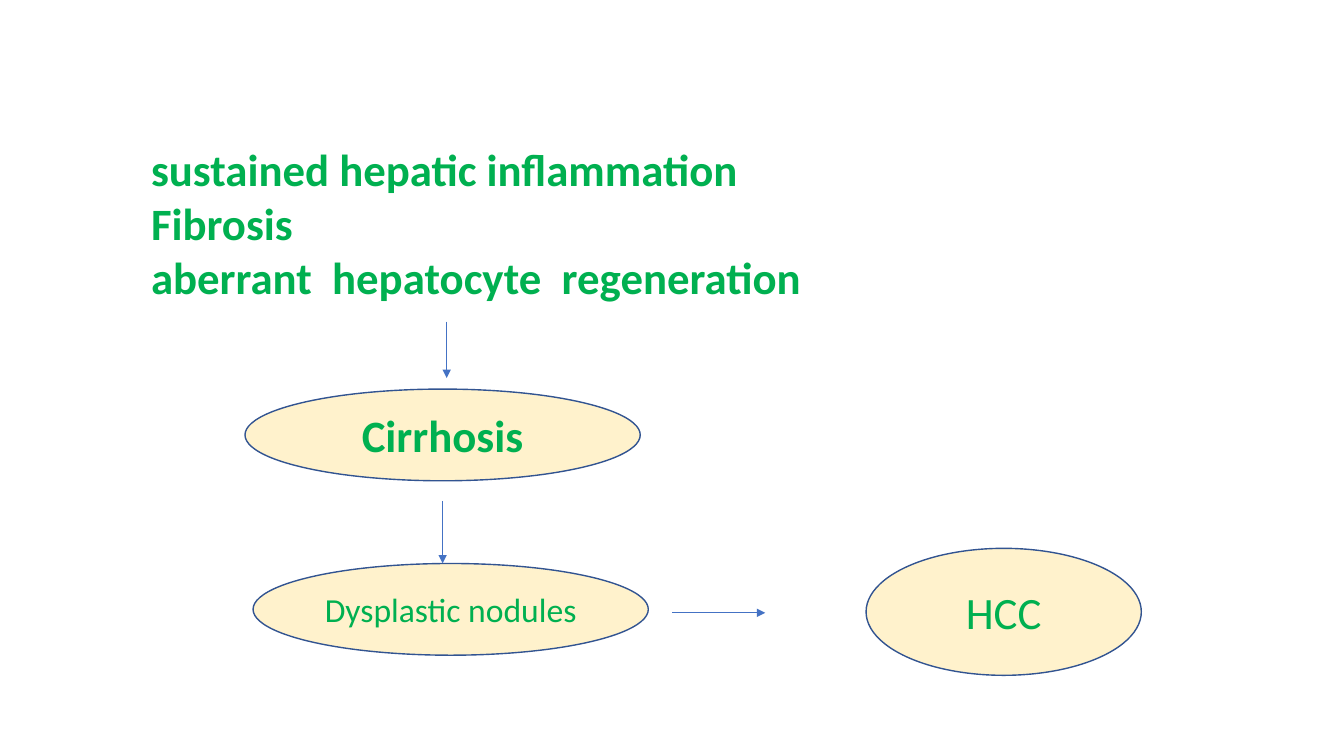
from pptx import Presentation
from pptx.dml.color import RGBColor
from pptx.enum.shapes import MSO_CONNECTOR as LINE, MSO_SHAPE as SHAPE
from pptx.enum.text import MSO_ANCHOR as ANCHOR, PP_ALIGN as ALIGN
from pptx.oxml.ns import qn
from pptx.util import Inches, Pt
from lxml.etree import SubElement

COLORS = {"text": "00B050", "fill": "FFF2CC", "edge": "325491", "arrow": "4472C4"}
FONT = "Calibri"

CAUSES = [
    "sustained hepatic inflammation",
    "Fibrosis",
    "aberrant  hepatocyte  regeneration",
]
CAUSE_BOX = (1.4, 1.36, 11.44, 1.72)

# text, (left, top, width, height), size, bold
STAGES = [
    ("Cirrhosis", (2.43, 3.86, 3.92, 0.91), 32, True),
    ("Dysplastic nodules", (2.51, 5.59, 3.92, 0.91), 24, False),
    ("HCC", (8.59, 5.44, 2.73, 1.26), 32, False),
]

# start x, start y, end x, end y
ARROWS = [
    (4.43, 3.19, 4.43, 3.75),
    (4.39, 4.97, 4.39, 5.59),
    (6.67, 6.08, 7.59, 6.08),
]


def color(name):
    return RGBColor.from_string(COLORS[name])


def inches(box):
    return [Inches(n) for n in box]


def add_text(frame, lines, size, bold, align):
    frame.word_wrap = True
    for i, line in enumerate(lines):
        para = frame.add_paragraph() if i else frame.paragraphs[0]
        para.alignment = align
        run = para.add_run()
        run.text = line
        font = run.font
        font.name, font.size, font.bold = FONT, Pt(size), bold
        font.color.rgb = color("text")


def add_stage(slide, text, box, size, bold):
    oval = slide.shapes.add_shape(SHAPE.OVAL, *inches(box))
    oval.shadow.inherit = False
    oval.fill.solid()
    oval.fill.fore_color.rgb = color("fill")
    oval.line.color.rgb = color("edge")
    oval.line.width = Pt(1)
    oval.text_frame.vertical_anchor = ANCHOR.MIDDLE
    add_text(oval.text_frame, [text], size, bold, ALIGN.CENTER)


def add_arrow(slide, ends):
    arrow = slide.shapes.add_connector(LINE.STRAIGHT, *inches(ends))
    arrow.line.color.rgb = color("arrow")
    arrow.line.width = Pt(0.5)
    props = arrow._element.spPr
    SubElement(props.find(qn("a:ln")), qn("a:tailEnd"), type="triangle")
    SubElement(props, qn("a:effectLst"))


def main():
    deck = Presentation()
    deck.slide_width, deck.slide_height = inches((13.33, 7.5))
    slide = deck.slides.add_slide(deck.slide_layouts[6])
    causes = slide.shapes.add_textbox(*inches(CAUSE_BOX))
    add_text(causes.text_frame, CAUSES, 32, True, ALIGN.LEFT)
    for stage in STAGES:
        add_stage(slide, *stage)
    for ends in ARROWS:
        add_arrow(slide, ends)
    deck.save("out.pptx")


if __name__ == "__main__":
    main()
